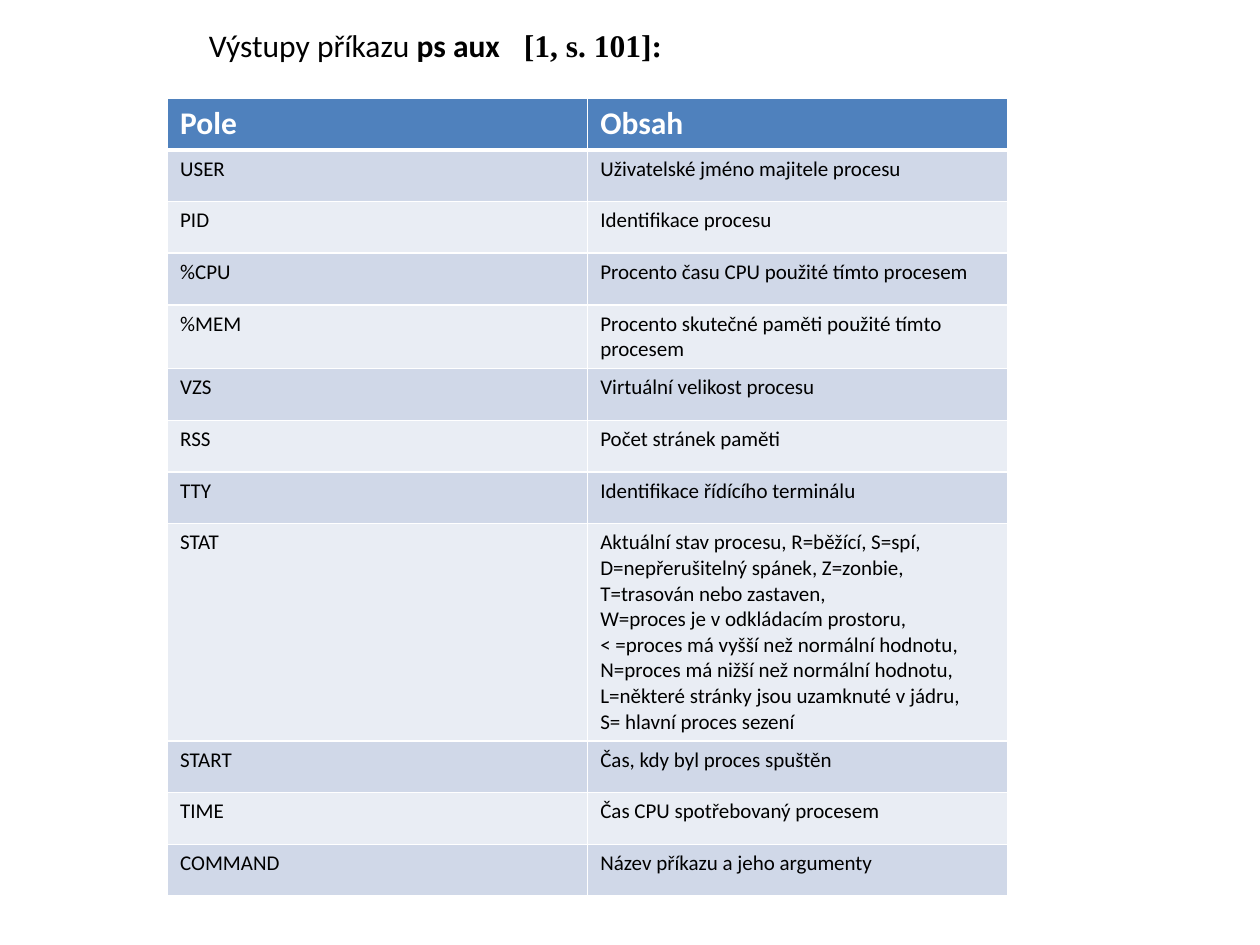
from dataclasses import dataclass

from lxml.etree import SubElement
from pptx import Presentation
from pptx.dml.color import RGBColor as Rgb
from pptx.oxml.ns import qn
from pptx.util import Inches, Pt

COLORS = {
    "header": "4F81BD",
    "odd_band": "D0D8E8",
    "even_band": "E9EDF4",
    "white": "FFFFFF",
    "black": "000000",
}
HEADER_FORMAT = {"name": "Calibri", "size": Pt(18), "bold": True}
BODY_FORMAT = {"name": "Calibri", "size": Pt(12), "bold": False}
TITLE_FORMAT = {"name": "Calibri", "size": Pt(18), "bold": False}
COMMAND_FORMAT = {**TITLE_FORMAT, "bold": True}
CITATION_FORMAT = {**COMMAND_FORMAT, "name": "Times New Roman"}
ROW_HEIGHT = 0.41


@dataclass
class Field:
    name: str
    meaning: str


@dataclass
class Heading:
    left: float
    width: float
    wrap: bool
    runs: list[tuple[str, dict]]


FIELDS = [
    Field("Pole", "Obsah"),
    Field("USER", "Uživatelské jméno majitele procesu"),
    Field("PID", "Identifikace procesu"),
    Field("%CPU", "Procento času CPU použité tímto procesem"),
    Field("%MEM", "Procento skutečné paměti použité tímto procesem"),
    Field("VZS", "Virtuální velikost procesu"),
    Field("RSS", "Počet stránek paměti"),
    Field("TTY", "Identifikace řídícího terminálu"),
    Field("STAT", "\n".join([
        "Aktuální stav procesu, R=běžící, S=spí, D=nepřerušitelný spánek, Z=zonbie,",
        "T=trasován nebo zastaven,",
        "W=proces je v odkládacím prostoru,",
        "< =proces má vyšší než normální hodnotu,",
        "N=proces má nižší než normální hodnotu,",
        "L=některé stránky jsou uzamknuté v jádru,",
        "S= hlavní proces sezení",
    ])),
    Field("START", "Čas, kdy byl proces spuštěn"),
    Field("TIME", "Čas CPU spotřebovaný procesem"),
    Field("COMMAND", "Název příkazu a jeho argumenty"),
]
HEADINGS = [
    Heading(1.56, 3.67, True, [("Výstupy příkazu ", TITLE_FORMAT), ("ps aux", COMMAND_FORMAT)]),
    Heading(4.06, 1.31, False, [("[1, s. 101]:", CITATION_FORMAT)]),
]


def apply_format(font, values: dict, color: str) -> None:
    for attribute, value in values.items():
        setattr(font, attribute, value)
    font.color.rgb = Rgb.from_string(COLORS[color])


def set_borders(cell, row: int) -> None:
    properties = cell._tc.get_or_add_tcPr()
    widths = {"lnL": 1, "lnR": 1, "lnT": 3 if row == 1 else 1, "lnB": 3 if row == 0 else 1}
    for side, width in widths.items():
        border = SubElement(properties, qn(f"a:{side}"), w=str(Pt(width)))
        fill = SubElement(border, qn("a:solidFill"))
        SubElement(fill, qn("a:srgbClr"), val=COLORS["white"])


def fill_cell(cell, text: str, row: int) -> None:
    set_borders(cell, row)
    band = "header" if row == 0 else "odd_band" if row % 2 else "even_band"
    cell.fill.solid()
    cell.fill.fore_color.rgb = Rgb.from_string(COLORS[band])
    cell.text_frame.text = text
    for paragraph in cell.text_frame.paragraphs:
        for run in paragraph.runs:
            if row == 0:
                apply_format(run.font, HEADER_FORMAT, "white")
            else:
                apply_format(run.font, BODY_FORMAT, "black")


def draw_fields(slide, fields: list[Field]) -> None:
    table = slide.shapes.add_table(
        len(fields), 2, Inches(1.33), Inches(0.78),
        Inches(6.67), Inches(ROW_HEIGHT * len(fields)),
    ).table
    for row, field in enumerate(fields):
        table.rows[row].height = Inches(ROW_HEIGHT)
        for column, text in enumerate((field.name, field.meaning)):
            fill_cell(table.cell(row, column), text, row)


def draw_heading(slide, heading: Heading) -> None:
    frame = slide.shapes.add_textbox(
        Inches(heading.left), Inches(0.16), Inches(heading.width), Inches(0.4)
    ).text_frame
    frame.word_wrap = heading.wrap
    for text, values in heading.runs:
        run = frame.paragraphs[0].add_run()
        run.text = text
        apply_format(run.font, values, "black")


def main() -> None:
    presentation = Presentation()
    presentation.slide_width = Inches(10)
    presentation.slide_height = Inches(7.5)
    slide = presentation.slides.add_slide(presentation.slide_layouts[6])
    draw_fields(slide, FIELDS)
    for heading in HEADINGS:
        draw_heading(slide, heading)
    presentation.save("out.pptx")


if __name__ == "__main__":
    main()
